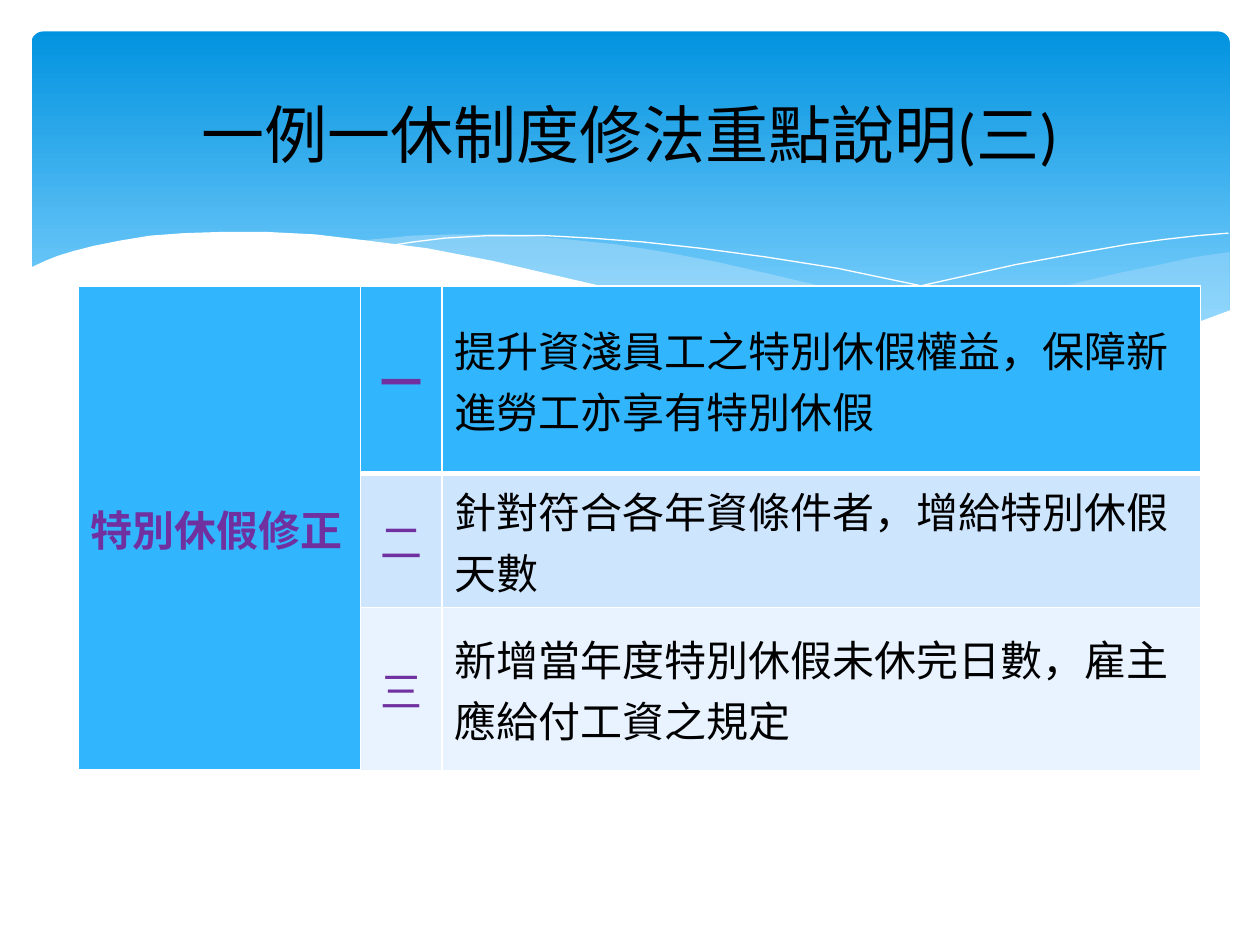
from lxml import etree
from pptx import Presentation
from pptx.dml.color import RGBColor
from pptx.enum.shapes import MSO_SHAPE
from pptx.enum.text import MSO_ANCHOR, PP_ALIGN
from pptx.oxml.ns import qn
from pptx.util import Inches, Pt

ROUNDED = MSO_SHAPE.ROUNDED_RECTANGLE
MIDDLE = MSO_ANCHOR.MIDDLE
LEFT, CENTER = PP_ALIGN.LEFT, PP_ALIGN.CENTER

BLACK, WHITE, PURPLE = "000000", "FFFFFF", "7030A0"
HEADER_BLUE, PALE_BLUE = "31B6FD", "C6E7FC"
ROW_FILLS = [HEADER_BLUE, "CEE5FE", "E8F3FF"]
COLUMN_WIDTHS = [2.24, 0.65, 6.02]
ROW_HEIGHTS = [1.49, 1.06, 1.3]
TOPIC = "特別休假修正"
POINTS = [
    ("一", "提升資淺員工之特別休假權益，保障新進勞工亦享有特別休假"),
    ("二", "針對符合各年資條件者，增給特別休假天數"),
    ("三", "新增當年度特別休假未休完日數，雇主應給付工資之規定"),
]

RIGHT_WAVE = [
    (9.76, 2), (9.48, 2.04), (9.21, 2.1), (8.91, 2.16), (8.61, 2.23), (8.05, 2.37),
    (7.53, 2.48), (7.06, 2.57), (6.61, 2.65), (6.91, 2.69), (7.18, 2.73), (7.45, 2.75),
    (7.81, 2.77), (8.14, 2.78), (8.44, 2.77), (8.72, 2.74), (8.97, 2.7), (9.21, 2.65),
    (9.49, 2.57), (9.76, 2.47),
]
MIDDLE_WAVE = [
    (8.93, 2.73), (8.66, 2.69), (8.07, 2.6), (7.41, 2.48), (6.68, 2.31), (6.13, 2.18),
    (5.69, 2.08), (5.27, 2), (4.89, 1.94), (4.41, 1.89), (3.99, 1.86), (3.61, 1.86),
    (3.28, 1.87), (2.86, 1.91), (3.23, 1.96), (3.62, 2.03), (4.04, 2.11), (4.49, 2.22),
    (4.91, 2.32), (5.3, 2.4), (5.84, 2.52), (6.34, 2.61), (6.8, 2.68), (7.22, 2.74),
    (7.61, 2.77), (7.96, 2.79), (8.28, 2.78), (8.57, 2.77),
]
WHITE_WAVE = [
    (9.77, 2.46), (9.5, 2.56), (9.2, 2.65), (8.87, 2.71), (8.5, 2.75), (8.09, 2.77),
    (7.61, 2.75), (7.08, 2.7), (6.47, 2.62), (6.03, 2.54), (5.55, 2.45), (5.03, 2.33),
    (4.47, 2.2), (3.91, 2.07), (3.39, 1.97), (2.92, 1.91), (2.5, 1.86), (2.11, 1.84),
    (1.77, 1.84), (1.46, 1.85), (1.19, 1.87), (0.95, 1.91), (0.75, 1.95), (0.59, 1.99),
    (0.46, 2.03), (0.36, 2.07), (0.23, 2.13), (0.23, 3.29), (9.77, 3.29),
]
LEFT_CURVE = [
    (3.09, 1.95), (3.28, 1.92), (3.53, 1.89), (3.87, 1.87), (4.33, 1.87), (4.69, 1.89),
    (5.1, 1.92), (5.56, 1.97), (6.08, 2.04), (6.65, 2.13), (7.27, 2.26), (7.95, 2.42),
    (8.31, 2.51), (8.68, 2.61), (9.07, 2.72),
]
RIGHT_CURVE = [
    (6.13, 2.57), (6.52, 2.46), (6.95, 2.35), (7.48, 2.23), (8.06, 2.1), (8.66, 1.99),
    (8.95, 1.94), (9.24, 1.9), (9.51, 1.87), (9.75, 1.85),
]


def color(value):
    """Turn a hex string into a colour."""
    return RGBColor.from_string(value)


def add_banner(page):
    """Add the rounded blue gradient behind the title."""
    banner = page.shapes.add_shape(ROUNDED, Inches(0.25), Inches(0.25), Inches(9.51), Inches(2.7))
    banner.adjustments[0] = 0.034
    banner.shadow.inherit = False
    banner.line.fill.background()
    banner.fill.gradient()
    banner.fill.gradient_angle = 270
    stops = [(0, "0293E0"), (0.9, "83D3FE")]
    for stop, (position, value) in zip(banner.fill.gradient_stops, stops):
        stop.position = position
        stop.color.rgb = color(value)


def draw_outline(page, points, close):
    """Build a freeform through points given in inches."""
    corners = [(Inches(x), Inches(y)) for x, y in points]
    builder = page.shapes.build_freeform(*corners[0])
    builder.add_line_segments(corners[1:], close=close)
    outline = builder.convert_to_shape()
    outline.shadow.inherit = False
    return outline


def add_wave(page, points, fill, opacity=100):
    """Add a filled wave with an opacity in percent."""
    wave = draw_outline(page, points, True)
    wave.line.fill.background()
    wave.fill.solid()
    wave.fill.fore_color.rgb = color(fill)
    if opacity < 100:
        tone = wave.fill._xPr.find(qn("a:solidFill"))[0]
        etree.SubElement(tone, qn("a:alpha"), val=str(opacity * 1000))


def add_curve(page, points):
    """Add a white hairline curve."""
    curve = draw_outline(page, points, False)
    curve.fill.background()
    curve.line.color.rgb = color(WHITE)
    curve.line.width = Pt(0)


def write(frame, text, size, font, value, align, bold=False):
    """Write one styled paragraph into a text frame."""
    para = frame.paragraphs[0]
    para.text = text
    para.alignment = align
    para.font.size = Pt(size)
    para.font.name = font
    para.font.bold = bold
    para.font.color.rgb = color(value)


def add_title(page, text):
    """Add the centred slide title."""
    box = page.shapes.add_textbox(Inches(0.5), Inches(0.37), Inches(9), Inches(1.37))
    box.text_frame.word_wrap = True
    box.text_frame.vertical_anchor = MIDDLE
    write(box.text_frame, text, 36, "Calibri", BLACK, CENTER)


def style_cell(cell, fill, bottom):
    """Give a cell white borders and a solid fill."""
    properties = cell._tc.get_or_add_tcPr()
    for side, width in (("lnL", 1), ("lnR", 1), ("lnT", 1), ("lnB", bottom)):
        border = etree.SubElement(properties, qn(f"a:{side}"), w=str(Pt(width)))
        solid = etree.SubElement(border, qn("a:solidFill"))
        etree.SubElement(solid, qn("a:srgbClr"), val=WHITE)
    cell.fill.solid()
    cell.fill.fore_color.rgb = color(fill)
    cell.vertical_anchor = MIDDLE


def add_points_table(page):
    """Add the table of amendments with its merged topic cell."""
    frame = page.shapes.add_table(
        len(ROW_HEIGHTS), len(COLUMN_WIDTHS), Inches(0.62), Inches(2.27),
        Inches(sum(COLUMN_WIDTHS)), Inches(sum(ROW_HEIGHTS)))
    table = frame.table
    for column, width in zip(table.columns, COLUMN_WIDTHS):
        column.width = Inches(width)
    for index, (number, text) in enumerate(POINTS):
        table.rows[index].height = Inches(ROW_HEIGHTS[index])
        topic, label, detail = table.rows[index].cells
        bottom = 3 if index == 0 else 1
        style_cell(topic, HEADER_BLUE, bottom)
        for cell in (label, detail):
            style_cell(cell, ROW_FILLS[index], bottom)
        write(label.text_frame, number, 24, "Calibri", PURPLE, CENTER, index == 0)
        write(detail.text_frame, text, 24, "Arial", BLACK, LEFT)
    table.cell(0, 0).merge(table.cell(2, 0))
    write(table.cell(0, 0).text_frame, TOPIC, 24, "Arial", PURPLE, LEFT, True)


def main():
    """Build the slide and save the deck."""
    deck = Presentation()
    deck.slide_width, deck.slide_height = Inches(10), Inches(7.5)
    page = deck.slides.add_slide(deck.slide_layouts[6])
    add_banner(page)
    add_wave(page, RIGHT_WAVE, PALE_BLUE, 29)
    add_wave(page, MIDDLE_WAVE, PALE_BLUE, 40)
    add_curve(page, LEFT_CURVE)
    add_curve(page, RIGHT_CURVE)
    add_wave(page, WHITE_WAVE, WHITE)
    add_title(page, "一例一休制度修法重點說明(三)")
    add_points_table(page)
    deck.save("out.pptx")


if __name__ == "__main__":
    main()
